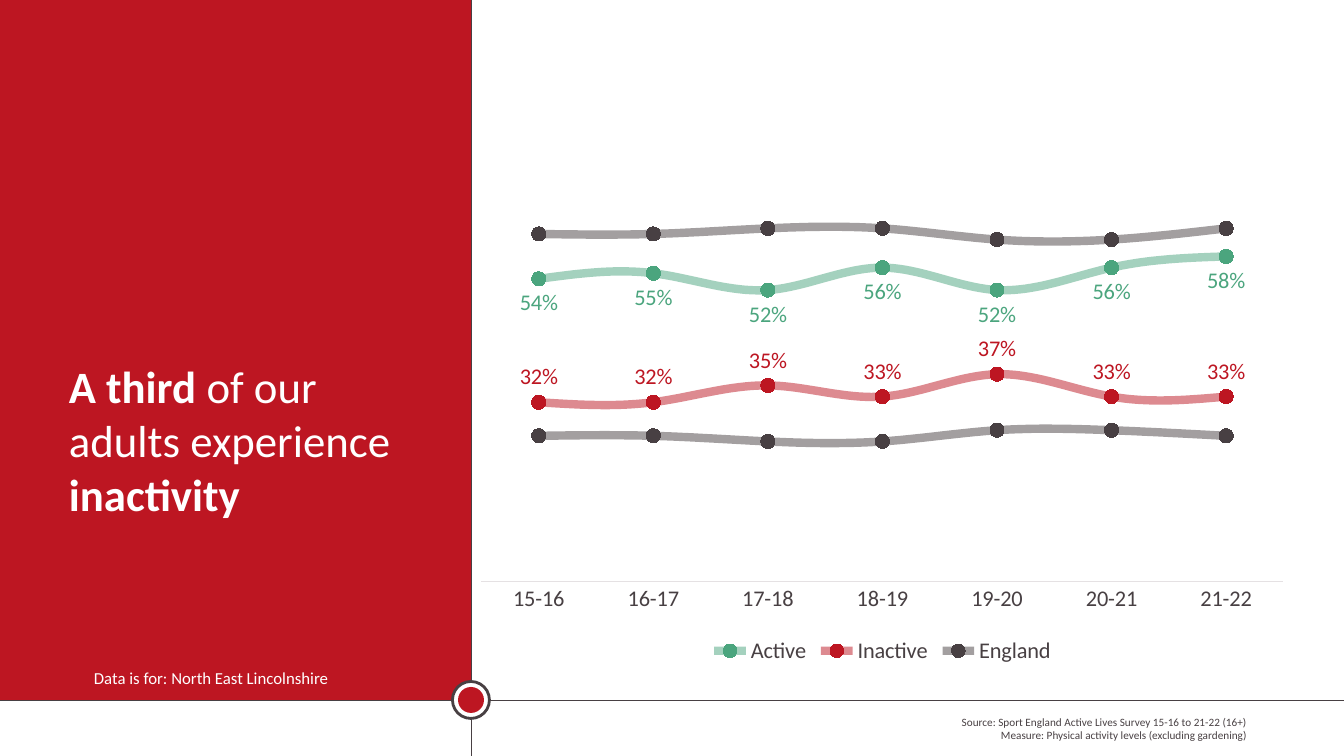
from pptx import Presentation
from pptx.chart.data import CategoryChartData as ChartData
from pptx.dml.color import RGBColor as RGB
from pptx.enum.chart import XL_CHART_TYPE as Kind, XL_LABEL_POSITION as Spot
from pptx.enum.chart import XL_LEGEND_POSITION as Side, XL_MARKER_STYLE as Mark
from pptx.enum.chart import XL_TICK_MARK as Tick
from pptx.enum.shapes import MSO_CONNECTOR as Wire, MSO_SHAPE as Form
from pptx.enum.text import MSO_AUTO_SIZE as Fit, PP_ALIGN as Align
from pptx.oxml import parse_xml
from pptx.oxml.ns import nsdecls, qn
from pptx.util import Emu, Pt

HUES = {"red": "BD1622", "green": "4BA57E", "dark": "484043",
        "pale": "E5E1E3", "white": "FFFFFF"}
WIDE, HIGH = 1344, 756
EDGE, BASE = 471, 700  # where the two rules cross

YEARS = [f"{y}-{y + 1}" for y in range(15, 22)]
TRENDS = [
    ("Active", "green", Spot.BELOW, (.54, .55, .52, .56, .52, .56, .58)),
    ("Inactive", "red", Spot.ABOVE, (.32, .32, .35, .33, .37, .33, .33)),
    ("England", "dark", None, (.26, .26, .25, .25, .27, .27, .26)),
    ("Series 4", "dark", None, (.62, .62, .63, .63, .61, .61, .63)),
]


def px(*nums):
    """Turn px into EMU."""
    return [Emu(round(n * 914400 / 100.8)) for n in nums]


def hue(name):
    return RGB.from_string(HUES[name])


class Page:
    """Holds the style and the slide being built."""
    face = "Calibri"

    def __init__(self, slide):
        self.shapes = slide.shapes

    def style(self, font, size, color, bold=False):
        look = {"name": self.face, "size": Pt(size), "bold": bold}
        for key, value in look.items():
            setattr(font, key, value)
        font.color.rgb = hue(color)

    def pen(self, line, color, width):
        line.color.rgb = hue(color)
        line.width = Pt(width)

    def shape(self, form, box, fill, edge=None):
        item = self.shapes.add_shape(form, *px(*box))
        item.shadow.inherit = False
        item.fill.solid()
        item.fill.fore_color.rgb = hue(fill)
        if edge:
            self.pen(item.line, edge, 2)
        else:
            item.line.fill.background()

    def disc(self, x, y, size, fill, edge=None):
        half = size / 2
        self.shape(Form.OVAL, (x - half, y - half, size, size), fill, edge)

    def rule(self, *ends):
        wire = self.shapes.add_connector(Wire.STRAIGHT, *px(*ends))
        self.pen(wire.line, "dark", 0.5)
        wire._element.spPr.append(
            parse_xml(f"<a:effectLst {nsdecls('a')}/>"))

    def text(self, box, paras, size, color, align=Align.LEFT, fit=Fit.NONE):
        """Each paragraph is a list of (words, bold) runs."""
        frame = self.shapes.add_textbox(*px(*box)).text_frame
        frame.word_wrap = True
        frame.auto_size = fit
        for i, runs in enumerate(paras):
            para = frame.add_paragraph() if i else frame.paragraphs[0]
            para.alignment = align
            for words, bold in runs:
                run = para.add_run()
                run.text = words
                self.style(run.font, size, color, bold)

    def chart(self, box, cats, trends, area, top):
        data = ChartData(number_format="0%")
        data.categories = cats
        for name, _, _, vals in trends:
            data.add_series(name, vals)
        chart = self.shapes.add_chart(
            Kind.LINE_MARKERS, *px(*box), data).chart
        chart.has_title = False
        self.style(chart.font, 16, "dark")
        self.axes(chart, top)
        self.place(chart, area)
        chart.plots[0].vary_by_categories = False
        for trend, (_, color, spot, _) in zip(chart.plots[0].series, trends):
            self.trend(trend, color, spot)
        self.legend(chart, len(trends) - 1)

    def axes(self, chart, top):
        cat, val = chart.category_axis, chart.value_axis
        cat.major_tick_mark = cat.minor_tick_mark = Tick.NONE
        self.pen(cat.format.line, "pale", 0.75)
        self.style(cat.tick_labels.font, 16, "dark")
        look = {"minimum_scale": 0, "maximum_scale": top,
                "has_major_gridlines": False, "visible": False}
        for key, value in look.items():
            setattr(val, key, value)

    def place(self, chart, area):
        """Fix the inner plot area, as shares of the chart."""
        plot = chart._chartSpace.chart.plotArea
        for old in plot.findall(qn("c:layout")):
            plot.remove(old)
        marks = "".join(f'<c:{k}Mode val="edge"/>' for k in "xy")
        marks += "".join(f'<c:{k} val="{v}"/>' for k, v in zip("xywh", area))
        plot.insert(0, parse_xml(
            f"<c:layout {nsdecls('c')}><c:manualLayout>"
            f'<c:layoutTarget val="inner"/>{marks}'
            "</c:manualLayout></c:layout>"))

    def trend(self, trend, color, spot):
        trend.smooth = True
        line = trend.format.line
        self.pen(line, color, 6)
        tint = line._ln.find(".//" + qn("a:srgbClr"))
        tint.append(parse_xml(f'<a:alpha {nsdecls("a")} val="50000"/>'))
        mark = trend.marker
        mark.style, mark.size = Mark.CIRCLE, 10
        mark.format.fill.solid()
        mark.format.fill.fore_color.rgb = hue(color)
        mark.format.line.fill.background()
        if spot is not None:
            tags = trend.data_labels
            look = {"show_value": True, "position": spot,
                    "number_format": "0%", "number_format_is_linked": False}
            for key, value in look.items():
                setattr(tags, key, value)
            self.style(tags.font, 16, color)

    def legend(self, chart, hidden):
        chart.has_legend = True
        key = chart.legend
        key.position = Side.BOTTOM
        key.include_in_layout = False
        self.style(key.font, 16, "dark")
        key._element.find(qn("c:legendPos")).addnext(parse_xml(
            f'<c:legendEntry {nsdecls("c")}><c:idx val="{hidden}"/>'
            '<c:delete val="1"/></c:legendEntry>'))


def main():
    deck = Presentation()
    deck.slide_width, deck.slide_height = px(WIDE, HIGH)
    page = Page(deck.slides.add_slide(deck.slide_layouts[6]))

    page.shape(Form.RECTANGLE, (0, 0, EDGE, BASE), "red")
    page.rule(EDGE, 0, EDGE, HIGH)
    page.rule(0, BASE, WIDE, BASE)
    page.disc(EDGE, BASE, 37, "white", "dark")
    page.disc(EDGE, BASE, 26, "red")

    page.text((605, 710, 652, 37), [
        [("Source: Sport England Active Lives Survey 15-16 to 21-22 (16+)",
          False)],
        [("Measure: Physical activity levels (excluding gardening)", False)],
    ], 8, "dark", Align.RIGHT, Fit.SHAPE_TO_FIT_TEXT)
    page.text((84, 663, 366, 30),
              [[("Data is for: North East Lincolnshire", False)]],
              12, "white", fit=Fit.SHAPE_TO_FIT_TEXT)
    page.text((59, 354, 375, 342), [
        [("A third ", True), ("of our adults experience ", False),
         ("inactivity", True)],
    ], 32, "white")

    page.chart((481, 156, 803, 513), YEARS, TRENDS,
               (0, 0.01, 1, 0.82), 0.75)
    deck.save("out.pptx")


if __name__ == "__main__":
    main()
